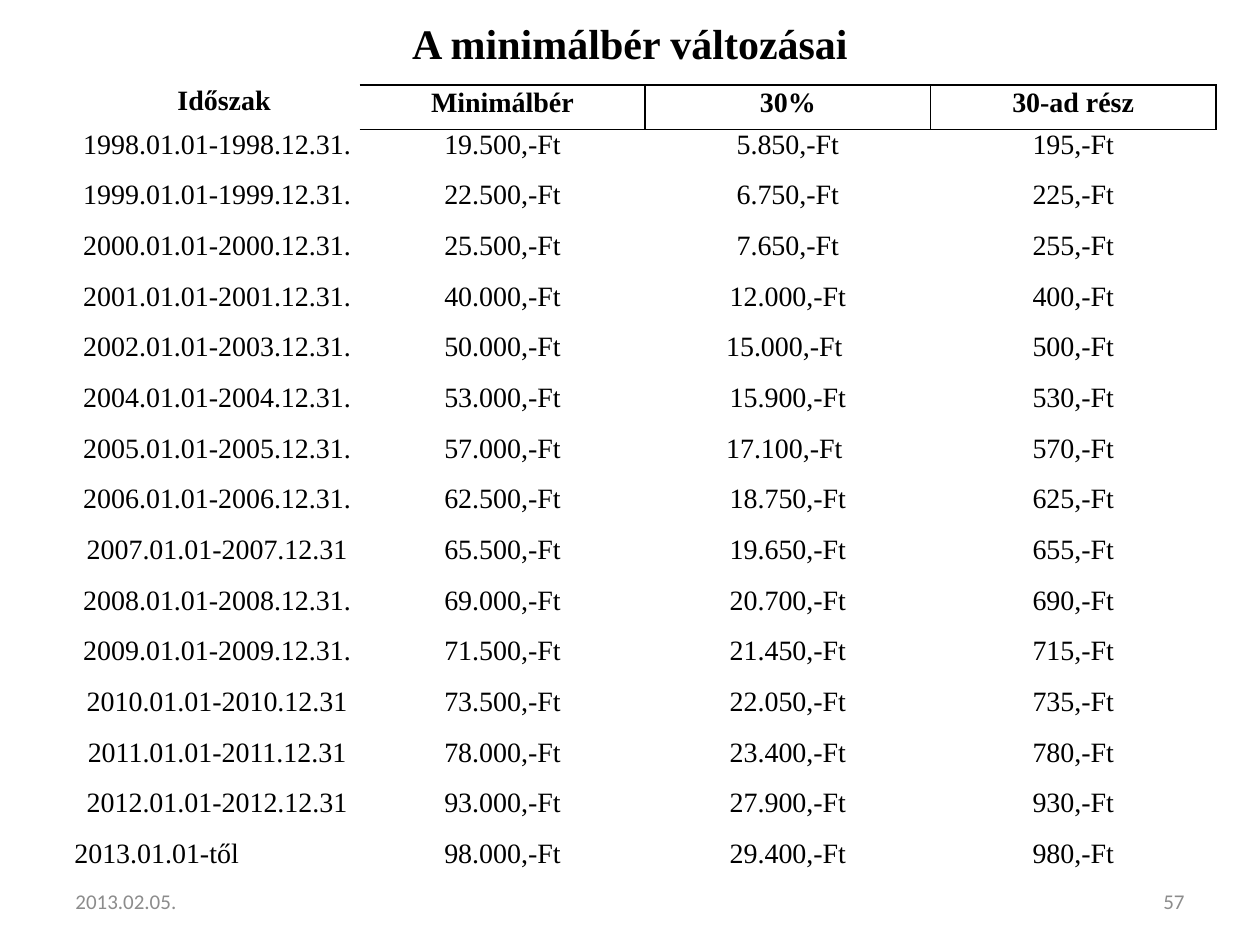
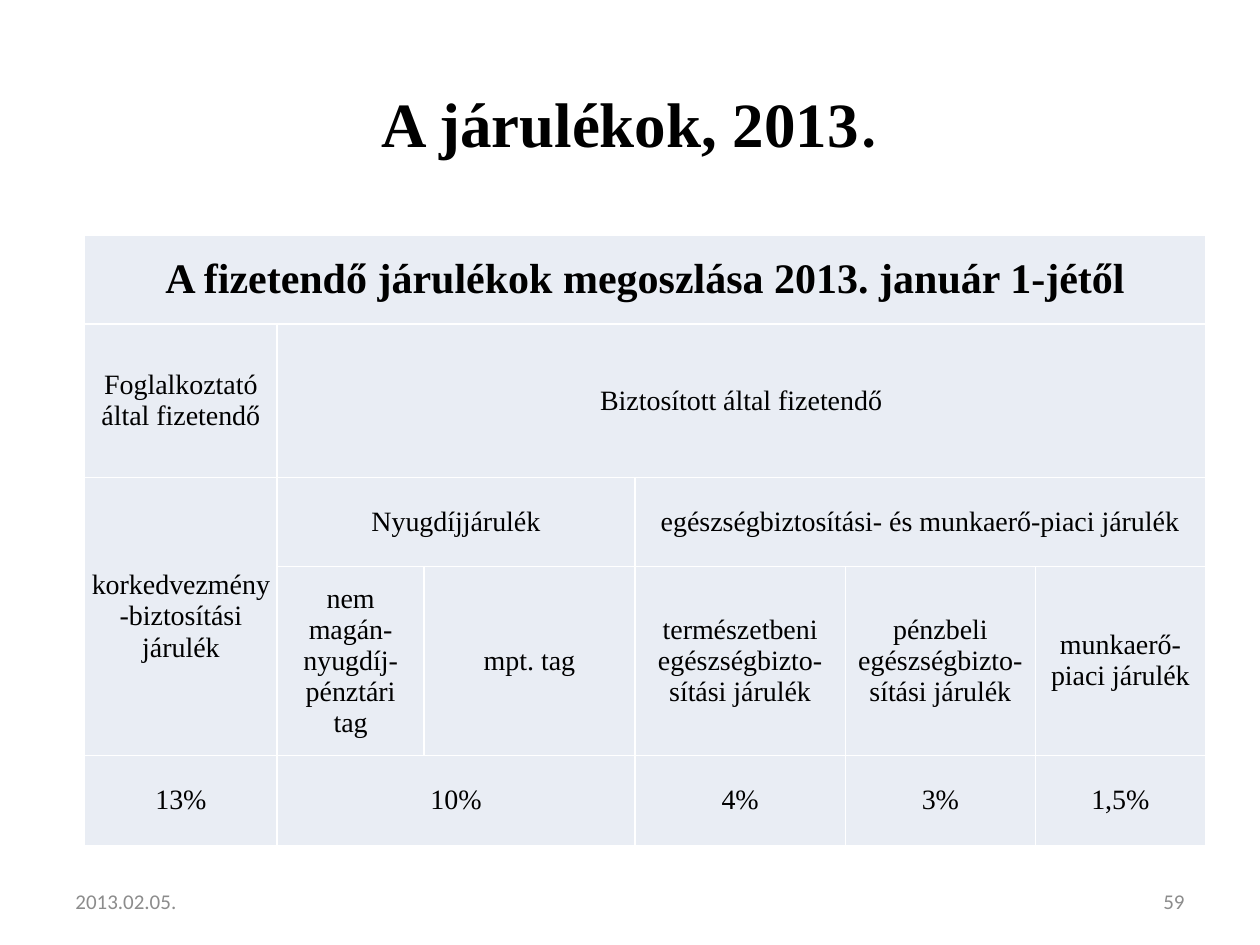
"""Build two slides on the minimum wage and on contribution rates."""
from dataclasses import dataclass

from lxml import etree
from pptx import Presentation
from pptx import util as u
from pptx.dml import color as dml
from pptx.enum import text as t
from pptx.oxml import ns

HUES = {"ink": "000000", "paper": "FFFFFF", "cell": "E9EDF4", "foot": "8C8C8C"}
SERIF, SANS = "Times New Roman", "Calibri"
LEFT, MID, RIGHT = t.PP_ALIGN.LEFT, t.PP_ALIGN.CENTER, t.PP_ALIGN.RIGHT
NO_STYLE = "{2D5ABB26-0587-4C30-8999-92F81FD0307C}"
DATE = "2013.02.05."
FOOT_TOP, FOOT_WIDE, FOOT_HIGH = 500.4, 168, 28.8

WAGE_HEAD = ("Időszak", "Minimálbér", "30%", "30-ad rész")
WAGES = (
    ("1998.01.01-1998.12.31.", "19.500,-Ft", "5.850,-Ft", "195,-Ft"),
    ("1999.01.01-1999.12.31.", "22.500,-Ft", "6.750,-Ft", "225,-Ft"),
    ("2000.01.01-2000.12.31.", "25.500,-Ft", "7.650,-Ft", "255,-Ft"),
    ("2001.01.01-2001.12.31.", "40.000,-Ft", "12.000,-Ft", "400,-Ft"),
    ("2002.01.01-2003.12.31.", "50.000,-Ft", "15.000,-Ft ", "500,-Ft"),
    ("2004.01.01-2004.12.31.", "53.000,-Ft", "15.900,-Ft", "530,-Ft"),
    ("2005.01.01-2005.12.31.", "57.000,-Ft", "17.100,-Ft ", "570,-Ft"),
    ("2006.01.01-2006.12.31.", "62.500,-Ft", "18.750,-Ft", "625,-Ft"),
    ("2007.01.01-2007.12.31", "65.500,-Ft", "19.650,-Ft", "655,-Ft"),
    ("2008.01.01-2008.12.31.", "69.000,-Ft", "20.700,-Ft", "690,-Ft"),
    ("2009.01.01-2009.12.31.", "71.500,-Ft", "21.450,-Ft", "715,-Ft"),
    ("2010.01.01-2010.12.31", "73.500,-Ft", "22.050,-Ft", "735,-Ft"),
    ("2011.01.01-2011.12.31", "78.000,-Ft", "23.400,-Ft", "780,-Ft"),
    ("2012.01.01-2012.12.31", "93.000,-Ft", "27.900,-Ft", "930,-Ft"),
    ("2013.01.01-től", "98.000,-Ft", "29.400,-Ft", "980,-Ft"),
)


@dataclass(frozen=True)
class Font:
    size: float
    bold: bool = False
    name: str = SERIF
    hue: str = "ink"


@dataclass(frozen=True)
class Box:
    left: float
    top: float
    wide: float
    high: float

    def pts(self) -> tuple:
        return tuple(u.Pt(n) for n in (self.left, self.top, self.wide, self.high))


@dataclass(frozen=True)
class Part:
    row: int
    col: int
    text: str
    rows: int = 1
    cols: int = 1


HEAD, BODY, LARGE = Font(16, True), Font(16), Font(24, True)
FOOT = Font(12, name=SANS, hue="foot")

RATES = (
    Part(0, 0, "A fizetendő járulékok megoszlása 2013. január 1-jétől", cols=6),
    Part(1, 0, "Foglalkoztató által fizetendő"),
    Part(1, 1, "Biztosított által fizetendő", cols=5),
    Part(2, 0, "korkedvezmény-biztosítási járulék", rows=2),
    Part(2, 1, "Nyugdíjjárulék", cols=2),
    Part(2, 3, "egészségbiztosítási- és munkaerő-piaci járulék", cols=3),
    Part(3, 1, "nem magán-nyugdíj-pénztári\ntag"),
    Part(3, 2, "mpt. tag"),
    Part(3, 3, "természetbeni egészségbizto-\nsítási járulék"),
    Part(3, 4, "pénzbeli egészségbizto-sítási járulék"),
    Part(3, 5, "munkaerő-piaci járulék"),
    Part(4, 0, "13%"),
    Part(4, 1, "10%", cols=2),
    Part(4, 3, "4%"),
    Part(4, 4, "3%"),
    Part(4, 5, "1,5%"),
)


def style(run, font: Font) -> None:
    run.font.size, run.font.bold, run.font.name = u.Pt(font.size), font.bold, font.name
    run.font.color.rgb = dml.RGBColor.from_string(HUES[font.hue])


def write(frame, words: str, font: Font, align=MID) -> None:
    frame.text = words
    for para in frame.paragraphs:
        para.alignment = align
        for run in para.runs:
            style(run, font)


def pad(item, side: float, edge: float) -> None:
    item.margin_left = item.margin_right = u.Pt(side)
    item.margin_top = item.margin_bottom = u.Pt(edge)


def edge(cell, sides: str, hue: str) -> None:
    props = cell._tc.get_or_add_tcPr()
    for spot, side in enumerate(sides):
        line = etree.Element(ns.qn(f"a:ln{side}"), w=str(u.Pt(1)))
        fill = etree.SubElement(line, ns.qn("a:solidFill"))
        etree.SubElement(fill, ns.qn("a:srgbClr"), val=HUES[hue])
        props.insert(spot, line)


def start(deck, title: str, font: Font, box: Box, page: int):
    slide = deck.slides.add_slide(deck.slide_layouts[5])
    head = slide.shapes.title
    head.left, head.top, head.width, head.height = box.pts()
    write(head.text_frame, title, font)
    head.text_frame.vertical_anchor = t.MSO_ANCHOR.MIDDLE
    for left, words, align in ((36, DATE, LEFT), (516, str(page), RIGHT)):
        area = Box(left, FOOT_TOP, FOOT_WIDE, FOOT_HIGH)
        frame = slide.shapes.add_textbox(*area.pts()).text_frame
        frame.word_wrap = True
        frame.vertical_anchor = t.MSO_ANCHOR.MIDDLE
        write(frame, words, FOOT, align)
    return slide


def grid(slide, left: float, top: float, cols: list, rows: list):
    box = Box(left, top, sum(cols), sum(rows))
    table = slide.shapes.add_table(len(rows), len(cols), *box.pts()).table
    table.first_row = table.horz_banding = False
    table._tbl.tblPr.find(ns.qn("a:tableStyleId")).text = NO_STYLE
    for col, wide in zip(table.columns, cols):
        col.width = u.Pt(wide)
    for row, high in zip(table.rows, rows):
        row.height = u.Pt(high)
    return table


def wages(deck) -> None:
    slide = start(deck, "A minimálbér változásai", LARGE, Box(36, 0, 648, 49), 57)
    table = grid(slide, 42.5, 48.6, [163.1] * 4, [25.3] + [28.95] * 14 + [23])
    for i, row in enumerate((WAGE_HEAD,) + WAGES):
        for j, words in enumerate(row):
            cell = table.cell(i, j)
            align = LEFT if (i, j) == (len(WAGES), 0) else MID
            write(cell.text_frame, words, BODY if i else HEAD, align)
            cell.fill.background()
            pad(cell, 0, 0)
            if i == 0 and j:
                pad(cell, 2, 1.5)
                edge(cell, "RTB" if j == 1 else "LRTB", "ink")
    table.cell(0, 0).margin_left = u.Pt(8)


def rates(deck) -> None:
    slide = start(deck, "A járulékok, 2013", Font(36, True), Box(36, 21.6, 648, 90), 59)
    dot = slide.shapes.title.text_frame.paragraphs[0].add_run()
    dot.text = "."
    style(dot, Font(44, name=SANS))
    cols = [110, 84, 120.4, 120.4, 108.5, 97.2]
    table = grid(slide, 48.4, 134.2, cols, [51, 87.8, 50.6, 108, 51.7])
    for cell in table.iter_cells():
        cell.fill.solid()
        cell.fill.fore_color.rgb = dml.RGBColor.from_string(HUES["cell"])
        cell.vertical_anchor = t.MSO_ANCHOR.MIDDLE
        pad(cell, 3.6, 0)
        edge(cell, "LRTB", "paper")
    for part in RATES:
        cell = table.cell(part.row, part.col)
        if part.rows * part.cols > 1:
            cell.merge(table.cell(part.row + part.rows - 1, part.col + part.cols - 1))
        write(cell.text_frame, part.text, BODY if part.row else LARGE)


def main() -> None:
    deck = Presentation()
    deck.slide_width, deck.slide_height = u.Pt(720), u.Pt(540)
    wages(deck)
    rates(deck)
    deck.save("out.pptx")


if __name__ == "__main__":
    main()
